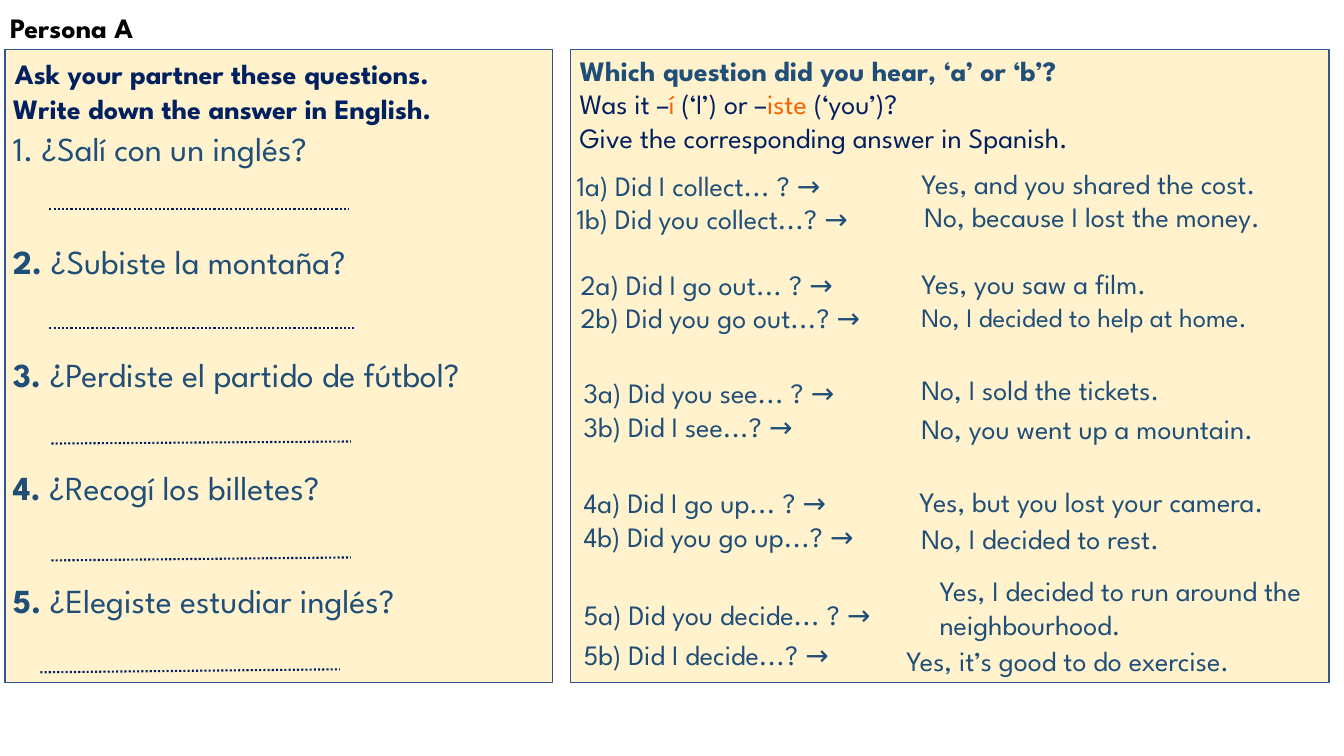
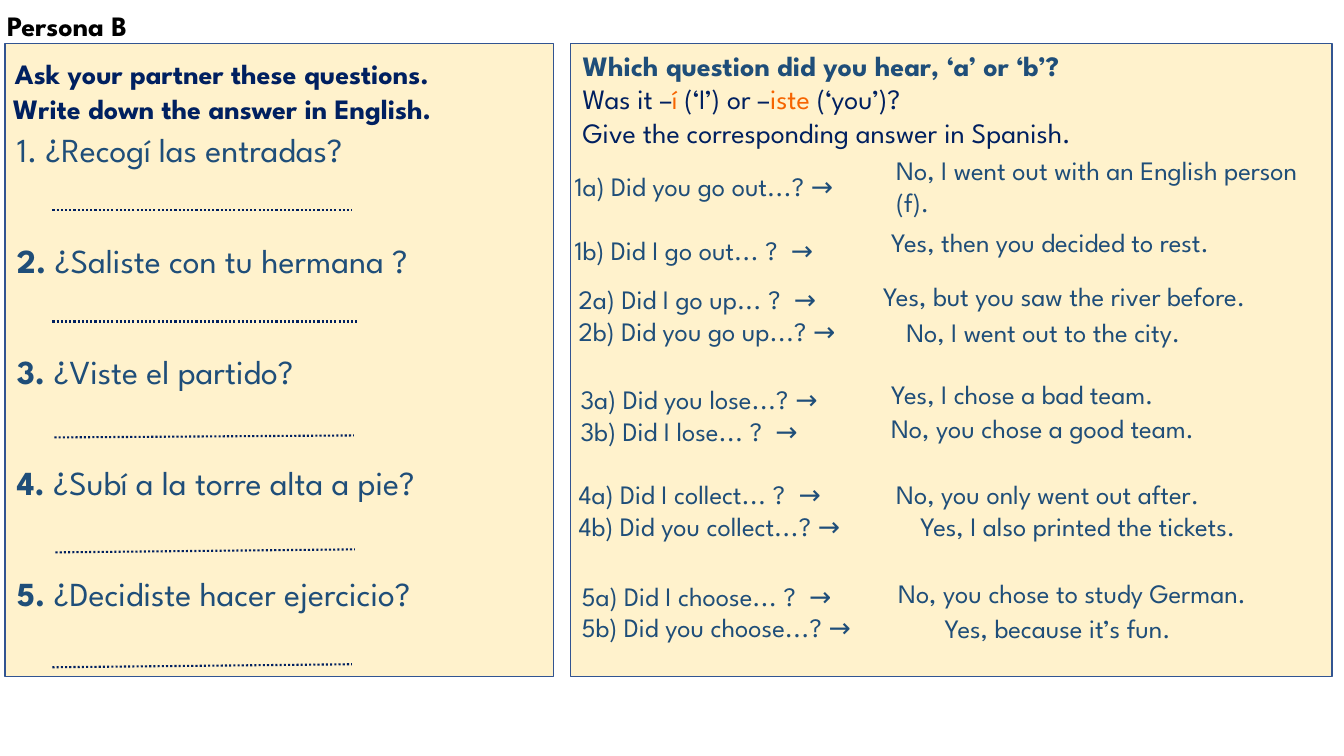
"""Build the two partner cards of a Spanish speaking exercise."""
from dataclasses import dataclass

from lxml.etree import SubElement
from pptx import Presentation
from pptx.dml.color import RGBColor
from pptx.enum.dml import MSO_LINE
from pptx.enum.shapes import MSO_CONNECTOR, MSO_SHAPE
from pptx.enum.text import MSO_ANCHOR, MSO_AUTO_SIZE, PP_ALIGN
from pptx.oxml.ns import qn
from pptx.slide import Slide
from pptx.text.text import TextFrame
from pptx.util import Inches, Pt


@dataclass(frozen=True)
class Theme:
    """Colours, font and type sizes of the cards."""

    font: str = "League Spartan"
    black: str = "000000"
    navy: str = "002060"
    blue: str = "1F4E79"
    orange: str = "F66400"
    cream: str = "FFF2CC"
    border: str = "325491"
    body: float = 20
    compact: float = 19
    question: float = 24


THEME = Theme()


@dataclass(frozen=True)
class Run:
    """A stretch of text in one format."""

    text: str
    color: str = THEME.blue
    bold: bool = False


@dataclass(frozen=True)
class Question:
    """A Spanish question and the dotted line for its answer."""

    text: str
    x: float
    y: float
    width: float = 2.97
    rise: float = 0


@dataclass(frozen=True)
class Answer:
    """An English cue for the reply."""

    text: str
    left: float
    top: float
    size: float | None = None


@dataclass(frozen=True)
class Pair:
    """Options a and b with their two answers."""

    left: float
    top: float
    options: tuple[str, str]
    answers: tuple[Answer, Answer]
    spacing: float = 1


@dataclass(frozen=True)
class Card:
    """One partner's slide."""

    title: str
    title_top: float
    title_indent: float
    panel_top: float
    panel_widths: tuple[float, float]
    heading_at: tuple[float, float]
    question_left: float
    question_top: float
    question_step: float
    size: float
    questions: tuple[Question, ...]
    pairs: tuple[Pair, ...]


TASK = ("Ask your partner these questions.", "Write down the answer in English.")
HEADING = (
    (Run("Which question did you hear, ‘a’ or ‘b’?", bold=True),),
    (
        Run("Was it –", THEME.navy),
        Run("í", THEME.orange),
        Run(" (‘I’) or –", THEME.navy),
        Run("iste", THEME.orange),
        Run(" (‘you’)?", THEME.navy),
    ),
    (Run("Give the corresponding answer in Spanish.", THEME.navy),),
)
PANEL_LEFTS = (0.05, 5.66)
PANEL_HEIGHT = 6.28
ANSWER_RIGHT = 13.1

CARDS = (
    Card(
        "Persona A", 0.04, 0.1, 0.49, (5.43, 7.52), (5.65, 0.48), 0.03, 1.22, 1.12, THEME.body,
        (
            Question("¿Salí con un inglés?", 0.49, 2.07),
            Question("¿Subiste la montaña?", 0.49, 3.25, 3.02),
            Question("¿Perdiste el partido de fútbol?", 0.51, 4.4, rise=0.02),
            Question("¿Recogí los billetes?", 0.51, 5.56, rise=0.03),
            Question("¿Elegiste estudiar inglés?", 0.4, 6.67, rise=0.03),
        ),
        (
            Pair(5.62, 1.62, ("1a) Did I collect... ? →", "1b) Did you collect...? →"),
                 (Answer("Yes, and you shared the cost.", 9.04, 1.6),
                  Answer("No, because I lost the money.", 9.07, 1.93))),
            Pair(5.66, 2.6, ("2a) Did I go out... ? →", "2b) Did you go out...? →"),
                 (Answer("Yes, you saw a film.", 9.04, 2.59),
                  Answer("No, I decided to help at home.", 9.04, 2.94, THEME.compact))),
            Pair(5.69, 3.68, ("3a) Did you see... ? →", "3b) Did I see...? →"),
                 (Answer("No, I sold the tickets.", 9.04, 3.65),
                  Answer("No, you went up a mountain.", 9.04, 4.03))),
            Pair(5.69, 4.77, ("4a) Did I go up... ? →", "4b) Did you go up...? →"),
                 (Answer("Yes, but you lost your camera.", 9.02, 4.76),
                  Answer("No, I decided to rest.", 9.04, 5.12))),
            Pair(5.69, 5.81, ("5a) Did you decide... ? →", "5b) Did I decide...? →"),
                 (Answer("Yes, I decided to run around the neighbourhood.", 9.22, 5.64),
                  Answer("Yes, it’s good to do exercise.", 8.89, 6.33)), 1.2),
        ),
    ),
    Card(
        "Persona B", 0.02, 0.07, 0.43, (5.44, 7.55), (5.68, 0.43), 0.07, 1.23, 1.1, THEME.compact,
        (
            Question("¿Recogí las entradas?", 0.52, 2.08),
            Question("¿Saliste con tu hermana ?", 0.52, 3.19, 3.02),
            Question("¿Viste el partido?", 0.54, 4.34, rise=0.02),
            Question("¿Subí a la torre alta a pie?", 0.55, 5.48, rise=0.03),
            Question("¿Decidiste hacer ejercicio?", 0.52, 6.62, rise=0.03),
        ),
        (
            Pair(5.6, 1.32, ("1a) Did you go out...? →", "1b) Did I go out... ?  →"),
                 (Answer("No, I went out with an English person (f).", 8.79, 1.48),
                  Answer("Yes, then you decided to rest.", 8.74, 2.19)), 2),
            Pair(5.64, 2.76, ("2a) Did I go up... ?  →", "2b) Did you go up...? →"),
                 (Answer("Yes, but you saw the river before.", 8.66, 2.73),
                  Answer("No, I went out to the city.", 8.89, 3.08))),
            Pair(5.66, 3.75, ("3a) Did you lose...? →", "3b) Did I lose... ?  →"),
                 (Answer("Yes, I chose a bad team.", 8.74, 3.7),
                  Answer("No, you chose a good team.", 8.74, 4.04))),
            Pair(5.64, 4.69, ("4a) Did I collect... ?  →", "4b) Did you collect...? →"),
                 (Answer("No, you only went out after.", 8.79, 4.69),
                  Answer("Yes, I also printed the tickets.", 9.03, 5.01))),
            Pair(5.67, 5.7, ("5a) Did I choose... ?  →", "5b) Did you choose...? →"),
                 (Answer("No, you chose to study German.", 8.81, 5.67),
                  Answer("Yes, because it’s fun.", 9.27, 6.02))),
        ),
    ),
)


def write(tf: TextFrame, *lines: tuple[Run, ...], size: float = THEME.body,
          spacing: float = 1, anchor: MSO_ANCHOR = MSO_ANCHOR.TOP) -> None:
    """Fill a text frame with one paragraph per line of runs."""
    tf.word_wrap = True
    tf.auto_size = MSO_AUTO_SIZE.NONE
    tf.vertical_anchor = anchor
    for i, line in enumerate(lines):
        p = tf.add_paragraph() if i else tf.paragraphs[0]
        p.alignment = PP_ALIGN.LEFT
        p.line_spacing = float(spacing)
        for part in line:
            r = p.add_run()
            r.text = part.text
            r.font.name = THEME.font
            r.font.size = Pt(size)
            r.font.bold = part.bold
            r.font.color.rgb = RGBColor.from_string(part.color)


def add_text(s: Slide, left: float, top: float, width: float, *lines: tuple[Run, ...],
             size: float = THEME.body, spacing: float = 1,
             anchor: MSO_ANCHOR = MSO_ANCHOR.TOP) -> None:
    """Add a text box as tall as its lines."""
    height = 0.1 + 0.0168 * size * spacing * len(lines)
    sp = s.shapes.add_textbox(Inches(left), Inches(top), Inches(width), Inches(height))
    write(sp.text_frame, *lines, size=size, spacing=spacing, anchor=anchor)


def add_panel(s: Slide, left: float, top: float, width: float) -> None:
    """Add a cream panel with a thin border."""
    sp = s.shapes.add_shape(MSO_SHAPE.RECTANGLE, Inches(left), Inches(top),
                            Inches(width), Inches(PANEL_HEIGHT))
    sp.shadow.inherit = False
    sp.fill.solid()
    sp.fill.fore_color.rgb = RGBColor.from_string(THEME.cream)
    sp.line.color.rgb = RGBColor.from_string(THEME.border)
    sp.line.width = Pt(1)


def add_answer_line(s: Slide, question: Question) -> None:
    """Add the dotted line below a question."""
    line = s.shapes.add_connector(
        MSO_CONNECTOR.STRAIGHT, Inches(question.x), Inches(question.y),
        Inches(question.x + question.width), Inches(question.y - question.rise))
    line.line.color.rgb = RGBColor.from_string(THEME.navy)
    line.line.width = Pt(1.5)
    line.line.dash_style = MSO_LINE.ROUND_DOT
    SubElement(line._element.spPr, qn("a:effectLst"))


def add_title(s: Slide, card: Card) -> None:
    """Place and format the title placeholder."""
    title = s.shapes.title
    title.left, title.top = Inches(0), Inches(card.title_top)
    title.width, title.height = Inches(11.5), Inches(0.5)
    title.text_frame.margin_left = Inches(card.title_indent)
    write(title.text_frame, (Run(card.title, THEME.black, True),),
          spacing=0.9, anchor=MSO_ANCHOR.MIDDLE)


def add_questions(s: Slide, card: Card) -> None:
    """Add the task and the numbered questions."""
    for text, left, top in zip(TASK, (0.05, 0.03), (0.44, 0.79)):
        add_text(s, left, top, 5.4, (Run(text, THEME.navy, True),),
                 spacing=1.2, anchor=MSO_ANCHOR.MIDDLE)
    for i, question in enumerate(card.questions):
        add_text(s, card.question_left, card.question_top + i * card.question_step, 5.4,
                 (Run(f"{i + 1}. ", bold=i > 0), Run(question.text)), size=THEME.question)
        add_answer_line(s, question)


def add_pairs(s: Slide, card: Card) -> None:
    """Add the heading, the options and their answers."""
    add_text(s, *card.heading_at, 6.41, *HEADING)
    for pair in card.pairs:
        add_text(s, pair.left, pair.top, 3.68, *((Run(text),) for text in pair.options),
                 size=card.size, spacing=pair.spacing)
        for answer in pair.answers:
            add_text(s, answer.left, answer.top, ANSWER_RIGHT - answer.left,
                     (Run(answer.text),), size=answer.size or card.size)


def main() -> None:
    """Build and save the presentation."""
    prs = Presentation()
    prs.slide_width, prs.slide_height = Inches(13.33), Inches(7.5)
    for card in CARDS:
        s = prs.slides.add_slide(prs.slide_layouts[5])
        add_title(s, card)
        for left, width in zip(PANEL_LEFTS, card.panel_widths):
            add_panel(s, left, card.panel_top, width)
        add_questions(s, card)
        add_pairs(s, card)
    prs.save("out.pptx")


if __name__ == "__main__":
    main()
